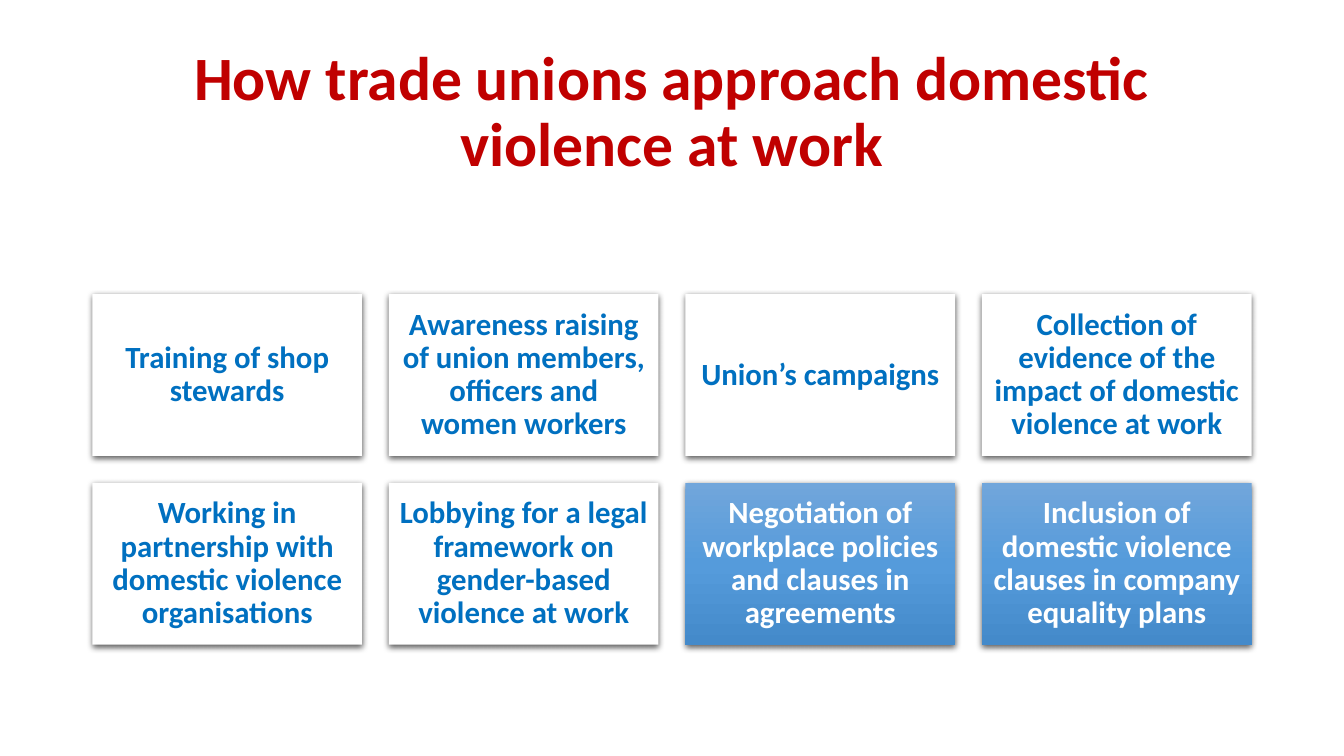
from copy import deepcopy

from pptx import Presentation
from pptx.dml.color import RGBColor
from pptx.enum.shapes import MSO_SHAPE as Shape
from pptx.enum.text import MSO_ANCHOR as Anchor, MSO_AUTO_SIZE as AutoSize, PP_ALIGN as Align
from pptx.oxml import parse_xml
from pptx.oxml.ns import nsdecls, qn
from pptx.util import Pt

RED = RGBColor(0xC0, 0x00, 0x00)
BLUE = RGBColor(0x00, 0x70, 0xC0)
WHITE = RGBColor(0xFF, 0xFF, 0xFF)
GRADIENT = [
    (0, RGBColor(0x71, 0xA6, 0xDB)),
    (0.5, RGBColor(0x55, 0x9B, 0xDB)),
    (1, RGBColor(0x44, 0x8A, 0xCA)),
]

# Card grid: gaps are a tenth of the card width
LEFT, TOP, WIDTH = 66, 210.2, 828
COLUMNS = 4
CARD_WIDTH = WIDTH / (COLUMNS + 0.1 * (COLUMNS - 1))
CARD_HEIGHT = 0.6 * CARD_WIDTH
GAP = 0.1 * CARD_WIDTH

# Approaches in reading order, with whether the card is highlighted
APPROACHES = [
    ("Training of shop stewards", False),
    ("Awareness raising of union members, officers and women workers", False),
    ("Union’s campaigns", False),
    ("Collection of evidence of the impact of domestic violence at work", False),
    ("Working in partnership with domestic violence organisations", False),
    ("Lobbying for a legal framework on gender-based violence at work", False),
    ("Negotiation of workplace policies and clauses in agreements", True),
    ("Inclusion of domestic violence clauses in company equality plans", True),
]


def write_text(shape, text, *, size, color, font="Calibri", bold=True, margin=None):
    frame = shape.text_frame
    frame.word_wrap = True
    frame.auto_size = AutoSize.NONE
    frame.vertical_anchor = Anchor.MIDDLE
    if margin is not None:
        frame.margin_left = frame.margin_right = Pt(margin)
        frame.margin_top = frame.margin_bottom = Pt(margin)
    paragraph = frame.paragraphs[0]
    paragraph.alignment = Align.CENTER
    paragraph.line_spacing = 0.9
    run = paragraph.add_run()
    run.text = text
    run.font.name = font
    run.font.size = Pt(size)
    run.font.bold = bold
    run.font.color.rgb = color


class SlideBuilder:
    title_size = 44
    card_size = 22
    card_margin = 6.6

    def __init__(self, presentation):
        self.slide = presentation.slides.add_slide(presentation.slide_layouts[5])

    def title(self, text, left, top, width, height):
        title = self.slide.shapes.title
        title.left, title.top = Pt(left), Pt(top)
        title.width, title.height = Pt(width), Pt(height)
        write_text(title, text, size=self.title_size, color=RED)

    def card(self, text, left, top, highlighted):
        shape = self.slide.shapes.add_shape(
            Shape.RECTANGLE, Pt(left), Pt(top), Pt(CARD_WIDTH), Pt(CARD_HEIGHT))
        shape.line.fill.background()
        if highlighted:
            self.gradient(shape)
        else:
            shape.fill.solid()
            shape.fill.fore_color.rgb = WHITE
        self.shadow(shape)
        write_text(shape, text, size=self.card_size, margin=self.card_margin,
                   color=WHITE if highlighted else BLUE)

    def gradient(self, shape):
        shape.fill.gradient()
        shape.fill.gradient_angle = 270
        # The default gradient has two stops; add the middle one
        stop_list = shape.element.spPr.find(".//" + qn("a:gsLst"))
        stop_list.insert(1, deepcopy(stop_list[0]))
        for stop, (position, color) in zip(shape.fill.gradient_stops, GRADIENT):
            stop.position = position
            stop.color.rgb = color

    def shadow(self, shape):
        shape.shadow.inherit = False
        effects = shape.element.spPr.find(qn("a:effectLst"))
        effects.append(parse_xml(
            f'<a:outerShdw {nsdecls("a")} blurRad="{Pt(4.5)}" dist="{Pt(1.5)}" '
            'dir="5400000" algn="ctr" rotWithShape="0">'
            '<a:srgbClr val="000000"><a:alpha val="63000"/></a:srgbClr></a:outerShdw>'))


def main():
    presentation = Presentation()
    presentation.slide_width, presentation.slide_height = Pt(960), Pt(540)
    builder = SlideBuilder(presentation)

    # Title
    builder.title("How trade unions approach domestic violence at work",
                  LEFT, 28.8, WIDTH, 104.4)

    # Cards
    for index, (text, highlighted) in enumerate(APPROACHES):
        row, column = divmod(index, COLUMNS)
        builder.card(text, LEFT + column * (CARD_WIDTH + GAP),
                     TOP + row * (CARD_HEIGHT + GAP), highlighted)

    presentation.save("out.pptx")


if __name__ == "__main__":
    main()
